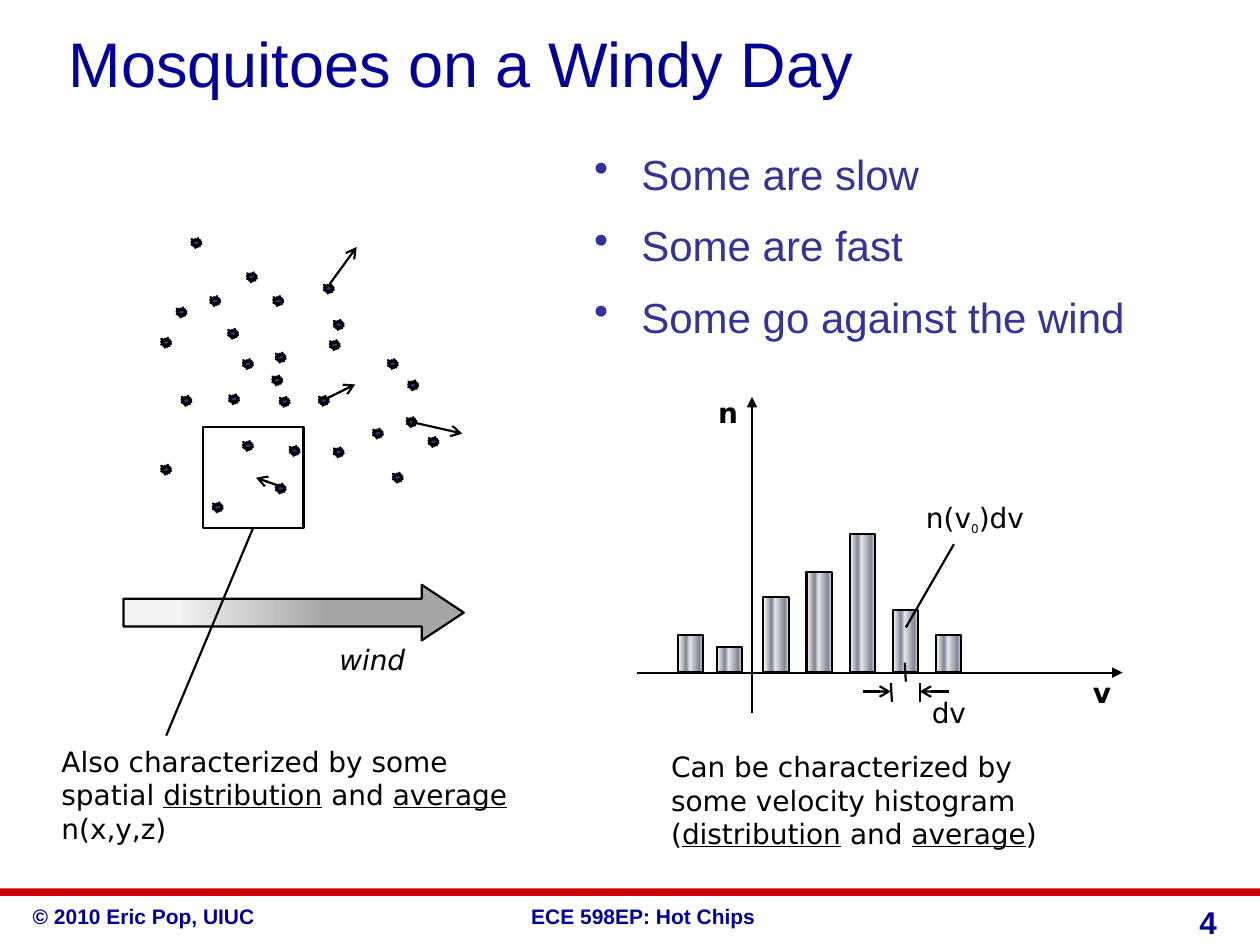
"""Build the slide on mosquitoes, wind and velocity histograms."""
from dataclasses import dataclass

from lxml import etree
from pptx import Presentation
from pptx.dml.color import RGBColor
from pptx.enum.shapes import MSO_CONNECTOR, MSO_SHAPE
from pptx.enum.text import MSO_ANCHOR, PP_ALIGN
from pptx.oxml.ns import qn
from pptx.util import Cm, Pt

RECT, SEAL = MSO_SHAPE.RECTANGLE, MSO_SHAPE.EXPLOSION1
ARROW, LINE = MSO_SHAPE.RIGHT_ARROW, MSO_CONNECTOR.STRAIGHT
LEFT, MID, RIGHT = PP_ALIGN.LEFT, PP_ALIGN.CENTER, PP_ALIGN.RIGHT
TOP = MSO_ANCHOR.TOP


@dataclass(frozen=True)
class Theme:
    ink: RGBColor = RGBColor(0, 0, 0)
    navy: RGBColor = RGBColor(0, 0, 0x99)
    blue: RGBColor = RGBColor(0x33, 0x33, 0x99)
    red: RGBColor = RGBColor(0xCC, 0, 0)
    wind: tuple = ((16, "F2F2F2"), (60, "A6A6A6"))
    steel: tuple = ((0, "FFFFFF"), (7, "E6E6E6"), (32, "7D8496"),
                    (47, "E6E6E6"), (85, "7D8496"), (100, "E6E6E6"))
    sans: str = "Arial"
    note: str = "DejaVu Sans"
    head: Pt = Pt(36)
    body: Pt = Pt(24)
    page: Pt = Pt(18)
    text: Pt = Pt(16)
    foot: Pt = Pt(12)
    rule: Pt = Pt(1.25)


theme = Theme()
deck = Presentation()
deck.slide_width, deck.slide_height = Cm(25.4), Cm(19.05)
slide = deck.slides.add_slide(deck.slide_layouts[6])
shapes = slide.shapes


def write(box, lines, size=theme.text, face=theme.note, color=theme.ink,
          bold=False, italic=False, align=LEFT, wrap=False):
    """Add a text box; bars in a line split it into plain and marked runs."""
    frame = shapes.add_textbox(*map(Cm, box)).text_frame
    frame.word_wrap = wrap
    frame.vertical_anchor = TOP
    for i, line in enumerate(lines):
        para = frame.paragraphs[0] if i == 0 else frame.add_paragraph()
        para.alignment = align
        font = para.font
        font.name, font.size, font.color.rgb = face, size, color
        font.bold, font.italic = bold, italic
        for part in line.split("|"):
            para.add_run().text = part
    return frame


def link(x1, y1, x2, y2, tip=None):
    """Add a straight line with an optional arrowhead at its end."""
    line = shapes.add_connector(LINE, *map(Cm, (x1, y1, x2, y2)))
    line.line.color.rgb = theme.ink
    line.line.width = theme.rule
    if tip:
        etree.SubElement(line.line._get_or_add_ln(), qn("a:tailEnd"), type=tip)
    etree.SubElement(line._element.spPr, qn("a:effectLst"))
    return line


band = shapes.add_shape(RECT, *map(Cm, (0, 17.91, 25.4, 0.15)))
band.shadow.inherit = False
band.fill.solid()
band.fill.fore_color.rgb = theme.red
band.line.fill.background()
for box, label in (((0.41, 18.08, 5.03, 0.76), "© 2010 Eric Pop, UIUC"),
                   ((10.46, 18.08, 5.08, 0.76), "ECE 598EP: Hot Chips")):
    write(box, [label], theme.foot, theme.sans, theme.navy, bold=True)
page = write((23.06, 18.21, 1.47, 0.51), ["4"], theme.page, theme.sans,
             theme.navy, bold=True, align=RIGHT, wrap=True)
page.margin_left = page.margin_right = page.margin_top = page.margin_bottom = 0

write((1.14, 0.36, 22.86, 1.8), ["Mosquitoes on a Windy Day"], theme.head,
      theme.sans, theme.navy, wrap=True)
points = write((11.73, 2.87, 13.23, 4.04),
               ["Some are slow", "Some are fast", "Some go against the wind"],
               theme.body, theme.sans, theme.blue, wrap=True)
for para in points.paragraphs:
    para.space_before = Pt(12)
    props = para._p.get_or_add_pPr()
    props.set("marL", str(Cm(0.95)))
    props.set("indent", str(-Cm(0.95)))
    dot = etree.Element(qn("a:buChar"), char="•")
    props.find(qn("a:defRPr")).addprevious(dot)

swarm = [(5.51, 5.97), (4.9, 7.24), (6.65, 6.86), (5.64, 8), (5.56, 7.11),
         (4.9, 8.89), (5.56, 9.75), (6.43, 7.98), (6.73, 9.02), (7.52, 8.64),
         (6.73, 6.45), (8.2, 8.41), (3.66, 7.98), (4.29, 10.13), (4.6, 6.63),
         (4.62, 7.95), (5.49, 7.57), (5.84, 8.99), (3.25, 6.81), (3.25, 9.37),
         (6.53, 5.72), (4.98, 5.49), (7.82, 7.24), (3.56, 6.2), (4.24, 5.97),
         (3.86, 4.8), (7.92, 9.53), (8.64, 8.81), (8.23, 7.67)]
for x, y in swarm:
    bug = shapes.add_shape(SEAL, *map(Cm, (x, y, 0.2, 0.2)))
    bug.shadow.inherit = False
    bug.fill.solid()
    bug.fill.fore_color.rgb = theme.blue
    bug.line.color.rgb = theme.ink
    bug.line.width = theme.rule
for ends in ((6.65, 5.72, 7.19, 4.98), (8.31, 8.51, 9.32, 8.74),
             (5.64, 9.8, 5.16, 9.63), (6.55, 8.05, 7.16, 7.75)):
    link(*ends, "arrow")

base, wide = 13.56, 0.51
link(12.85, base, 22.63, base, "triangle")
link(15.16, 14.38, 15.16, 8, "triangle")
bars = [(13.67, 0.76), (14.45, 0.51)]
bars += [(15.39 + 0.87 * i, tall)
         for i, tall in enumerate((1.52, 2.03, 2.79, 1.27, 0.76))]
shades = [(ARROW, (2.49, 11.79, 6.86, 1.12), theme.wind)]
shades += [(RECT, (x, base - tall, wide, tall), theme.steel)
           for x, tall in bars]
for kind, box, stops in shades:
    shape = shapes.add_shape(kind, *map(Cm, box))
    shape.shadow.inherit = False
    if kind == ARROW:
        shape.adjustments[0], shape.adjustments[1] = 0.5, 0.756
    shape.fill.gradient()
    shape.fill.gradient_angle = 0
    ramp = shape._element.spPr.find(qn("a:gradFill")).find(qn("a:gsLst"))
    for old in list(ramp):
        ramp.remove(old)
    for pos, shade in stops:
        stop = etree.SubElement(ramp, qn("a:gs"), pos=str(pos * 1000))
        etree.SubElement(stop, qn("a:srgbClr"), val=shade)
    shape.line.color.rgb = theme.ink
    shape.line.width = theme.rule

for ends in ((18.26, 12.65, 19.23, 10.97), (18.26, 13.74, 18.24, 13.36),
             (17.98, 14.15, 17.96, 13.77), (18.54, 14.15, 18.54, 13.77)):
    link(*ends)
link(17.4, 13.94, 17.96, 13.94, "arrow")
link(19.13, 13.94, 18.54, 13.94, "arrow")

frame = shapes.add_shape(RECT, *map(Cm, (4.09, 8.61, 2.03, 2.03)))
frame.shadow.inherit = False
frame.fill.background()
frame.line.color.rgb = theme.ink
frame.line.width = theme.rule
link(5.11, 10.64, 3.35, 14.83).begin_connect(frame, 2)

write((6.58, 12.83, 1.85, 0.94), ["wind"], italic=True, align=MID)
write((14.22, 7.85, 0.91, 0.94), ["n"], bold=True, align=MID)
write((21.77, 13.49, 0.89, 0.94), ["v"], bold=True, align=MID)
write((18.52, 13.89, 1.22, 0.94), ["dv"], align=MID)
count = write((18.31, 9.96, 2.69, 0.94), ["n(v|0|)dv"], align=MID)
sub = count.paragraphs[0].runs[1].font
sub.size = theme.foot
sub._element.set("baseline", "-25000")

notes = (
    ((13.28, 14.99, 8.48, 2.31),
     ["Can be characterized by some velocity histogram "
      "(|distribution| and |average|)"]),
    ((0.99, 14.88, 9.58, 2.31),
     ["Also characterized by some spatial |distribution| and |average",
      "n(x,y,z)"]),
)
for box, lines in notes:
    for para in write(box, lines, wrap=True).paragraphs:
        for run in para.runs[1::2]:
            run.font.underline = True

deck.save("out.pptx")
